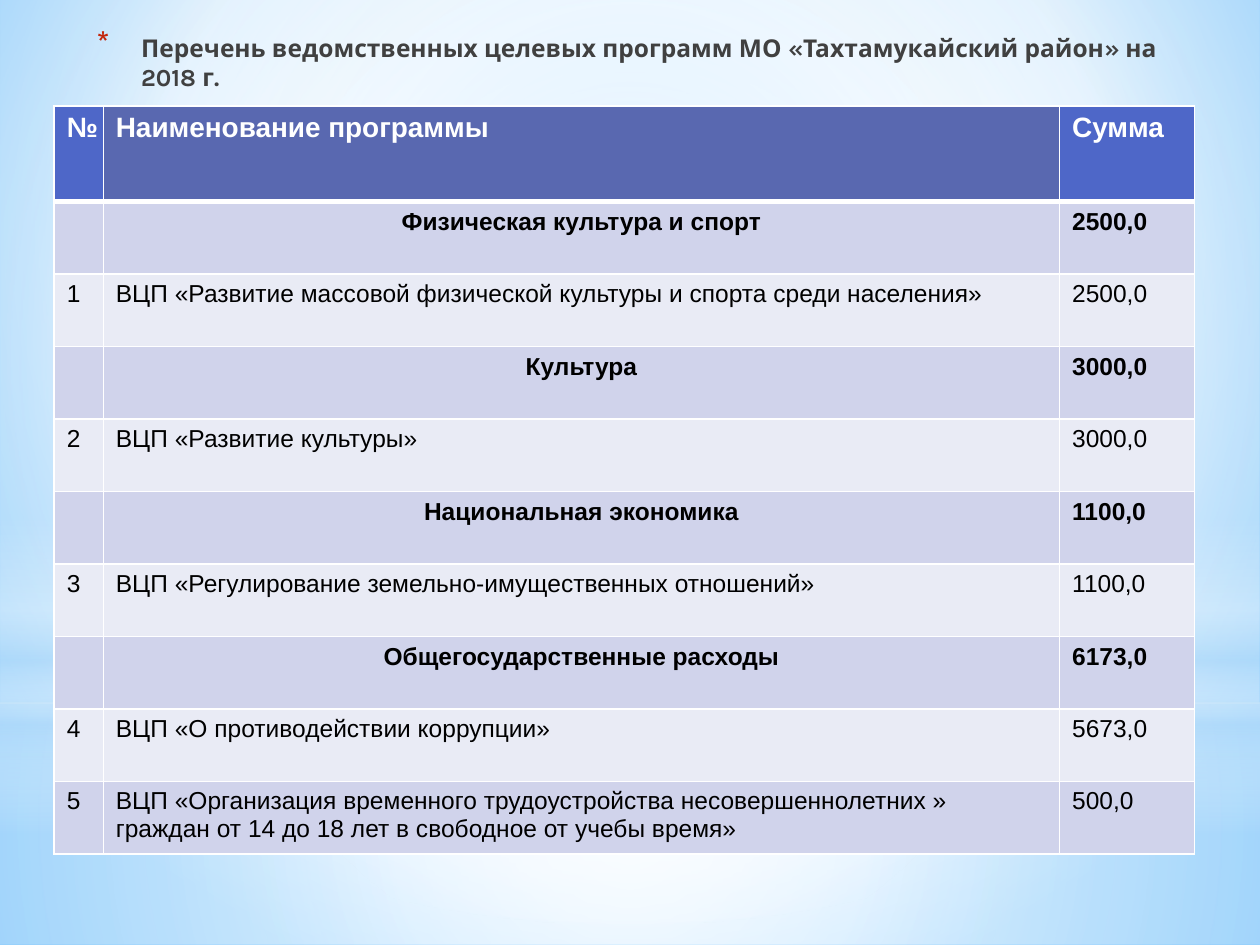
from pptx import Presentation
from pptx.dml.color import RGBColor
from pptx.enum.shapes import MSO_SHAPE
from pptx.enum.text import MSO_ANCHOR, MSO_AUTO_SIZE, PP_ALIGN
from pptx.oxml import parse_xml
from pptx.oxml.ns import nsdecls, qn
from pptx.util import Inches, Pt

HEADER = ["№", "Наименование программы", "Сумма"]
PROGRAMS = [
    ("", "Физическая культура и спорт", "2500,0"),
    ("1", "ВЦП «Развитие массовой физической культуры и спорта среди населения»", "2500,0"),
    ("", "Культура", "3000,0"),
    ("2", "ВЦП «Развитие культуры»", "3000,0"),
    ("", "Национальная экономика", "1100,0"),
    ("3", "ВЦП «Регулирование земельно-имущественных отношений»", "1100,0"),
    ("", "Общегосударственные расходы", "6173,0"),
    ("4", "ВЦП «О противодействии коррупции»", "5673,0"),
    ("5", "ВЦП «Организация временного трудоустройства несовершеннолетних » "
          "граждан от 14 до 18 лет в свободное от учебы время»", "500,0"),
]
CENTER = (50, 50, 50, 50)
# Backdrop layers: shape, box, stops (position, colour, opacity), circle focus
LAYERS = [
    (MSO_SHAPE.RECTANGLE, (0, 5.58, 10, 1.92),
     [(0, "FFFFFF", 91), (37, "FFFFFF", 76), (100, "B4DCFA", 79)], CENTER),
    (MSO_SHAPE.RECTANGLE, (0, 0, 10, 5.58),
     [(0, "FFFFFF", 89), (48, "FFFFFF", 62), (100, "B4DCFA", 79)], CENTER),
    (MSO_SHAPE.RECTANGLE, (0, 4.12, 10, 2.5),
     [(0, "FFFFFF", 0), (29, "FFFFFF", 30), (45, "B4DCFA", 40),
      (55, "FFFFFF", 26), (65, "B4DCFA", 60), (100, "FFFFFF", 0)], None),
    (MSO_SHAPE.OVAL, (0, 1.75, 10, 5.58),
     [(0, "FFFFFF", 100), (56, "FFFFFF", 0)], CENTER),
]


def color(value):
    return RGBColor.from_string(value)


def set_gradient(fill, parent, stops, focus=None):
    """Circular gradient around focus, or a top-down one without it."""
    fill.solid()
    gs = "".join(f'<a:gs pos="{pos * 1000}"><a:srgbClr val="{value}">'
                 f'<a:alpha val="{alpha * 1000}"/></a:srgbClr></a:gs>'
                 for pos, value, alpha in stops)
    if focus:
        l, t, r, b = (v * 1000 for v in focus)
        way = (f'<a:path path="circle"><a:fillToRect l="{l}" t="{t}" '
               f'r="{r}" b="{b}"/></a:path>')
    else:
        way = '<a:lin ang="5400000" scaled="0"/>'
    parent.replace(parent.find(qn("a:solidFill")), parse_xml(
        f'<a:gradFill {nsdecls("a")} rotWithShape="1"><a:gsLst>{gs}</a:gsLst>{way}</a:gradFill>'))


def add_backdrop(s):
    fill = s.background.fill
    fill.solid()
    set_gradient(fill, s.element.find(".//" + qn("p:bgPr")),
                 [(0, "9ED5FF", 100), (60, "FFFFFF", 100), (100, "5BB9FF", 100)],
                 (20, 10, 20, 60))
    for kind, box, stops, focus in LAYERS:
        sp = s.shapes.add_shape(kind, *map(Inches, box))
        sp.shadow.inherit = False
        sp.line.fill.background()
        set_gradient(sp.fill, sp.element.spPr, stops, focus)


def add_title(s, left, top, width, height):
    sp = s.shapes.title
    sp.element.getparent().append(sp.element)  # in front of the backdrop
    sp.left, sp.top, sp.width, sp.height = map(Inches, (left, top, width, height))
    tf = sp.text_frame
    tf.text = "Перечень ведомственных целевых программ МО «Тахтамукайский район» на 2018 г."
    tf.word_wrap = True
    tf.auto_size = MSO_AUTO_SIZE.NONE
    tf.vertical_anchor = MSO_ANCHOR.TOP
    p = tf.paragraphs[0]
    p.alignment = PP_ALIGN.LEFT
    font = p.runs[0].font
    font.size, font.bold, font.name = Pt(14), True, "Karla"
    set_gradient(font.fill, p.runs[0]._r.get_or_add_rPr(),
                 [(0, "000000", 100), (40, "404040", 100), (100, "212745", 65)])
    # Asterisk bullet with a hanging indent
    pPr = p._p.get_or_add_pPr()
    pPr.set("marL", str(Inches(0.35)))
    pPr.set("indent", str(-Inches(0.35)))
    for xml in ('<a:buClr {}><a:srgbClr val="C3260C"/></a:buClr>',
                '<a:buSzPct {} val="128000"/>', '<a:buChar {} char="*"/>'):
        pPr.append(parse_xml(xml.format(nsdecls("a"))))


def set_borders(cell, bottom):
    tcPr = cell._tc.get_or_add_tcPr()
    for i, (side, width) in enumerate((("L", 1), ("R", 1), ("T", 1), ("B", bottom))):
        tcPr.insert(i, parse_xml(
            f'<a:ln{side} {nsdecls("a")} w="{Pt(width)}"><a:solidFill>'
            f'<a:srgbClr val="FFFFFF"/></a:solidFill></a:ln{side}>'))


def fill_cell(cell, text, fill, size, ink, bold, align, bottom=1):
    cell.fill.solid()
    cell.fill.fore_color.rgb = color(fill)
    set_borders(cell, bottom)
    if not text:
        return
    cell.text = text
    p = cell.text_frame.paragraphs[0]
    p.alignment = align
    font = p.runs[0].font
    font.size, font.bold, font.name = Pt(size), bold, "Arial"
    font.color.rgb = color(ink)


def add_program_table(s, left, top, width, height):
    table = s.shapes.add_table(len(PROGRAMS) + 1, len(HEADER),
                               *map(Inches, (left, top, width, height))).table
    for column, share in zip(table.columns, (0.39, 7.59, 1.07)):
        column.width = Inches(share)
    header_height = 0.76
    for i, row in enumerate(table.rows):
        row.height = Inches((height - header_height) / len(PROGRAMS) if i else header_height)

    for j, text in enumerate(HEADER):
        fill_cell(table.cell(0, j), text, "5968B0" if j == 1 else "4E67C8",
                  16, "FFFFFF", True, PP_ALIGN.LEFT, bottom=3)
    for i, values in enumerate(PROGRAMS, 1):
        section = not values[0]  # section rows carry no number
        for j, text in enumerate(values):
            fill_cell(table.cell(i, j), text, "D0D3EB" if i % 2 else "E9EBF5",
                      14, "000000", section,
                      PP_ALIGN.CENTER if section and j == 1 else PP_ALIGN.LEFT,
                      bottom=1)
    for j in range(len(HEADER)):  # same thick rule seen from the row below
        table.cell(1, j)._tc.tcPr.find(qn("a:lnT")).set("w", str(Pt(3)))


def main():
    prs = Presentation()
    prs.slide_width, prs.slide_height = Inches(10), Inches(7.5)
    s = prs.slides.add_slide(prs.slide_layouts[5])
    add_backdrop(s)
    add_title(s, 0.67, 0.21, 8.74, 0.47)
    add_program_table(s, 0.43, 0.84, 9.06, 5.94)
    prs.save("out.pptx")


if __name__ == "__main__":
    main()
